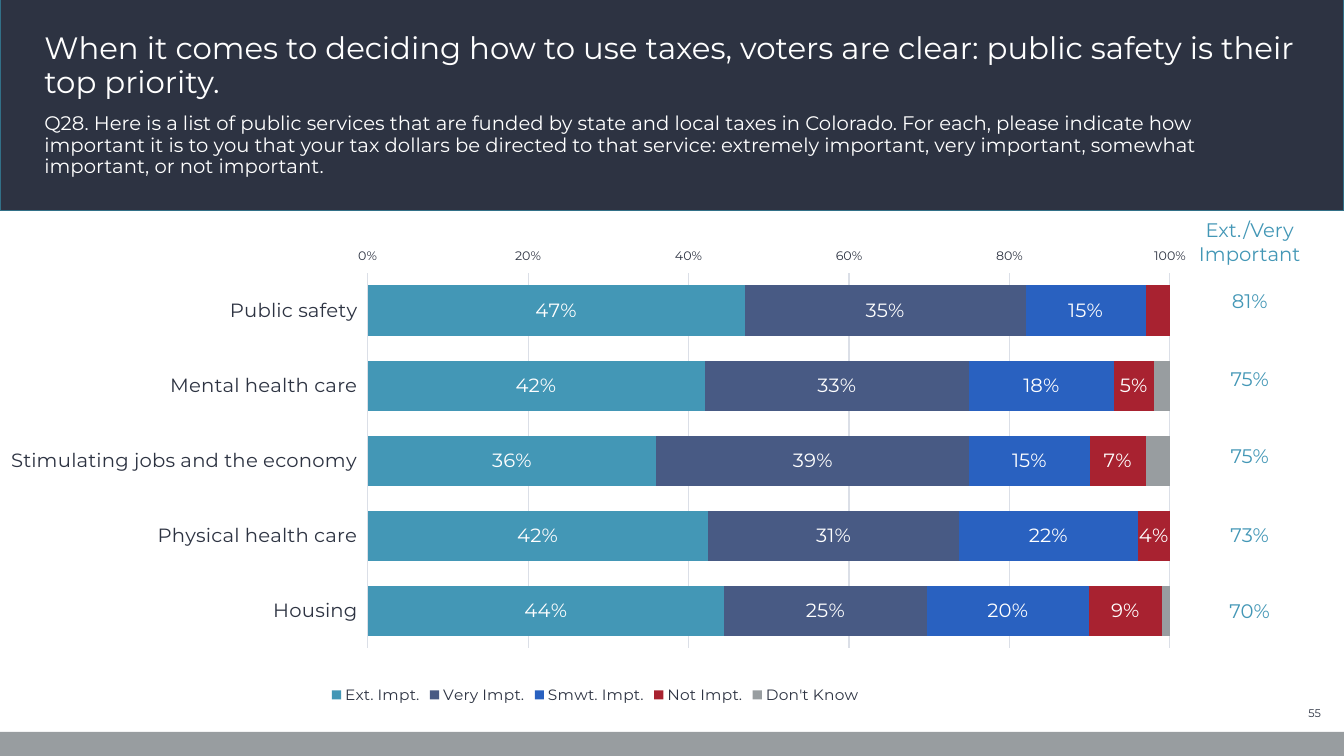
"""Build the slide on which public services voters rank highest for tax money."""
from dataclasses import dataclass
from typing import Any

import pptx
import pptx.chart.data
import pptx.dml.color
import pptx.enum.chart
import pptx.enum.shapes
import pptx.enum.text
import pptx.oxml
import pptx.oxml.ns
import pptx.util

Inches = pptx.util.Inches
Pt = pptx.util.Pt
Align = pptx.enum.text.PP_ALIGN
Anchor = pptx.enum.text.MSO_ANCHOR
qn = pptx.oxml.ns.qn

FACE = "Montserrat"
NAVY, WHITE, TEAL, GRAY = "2D3342", "FFFFFF", "4397B6", "989DA0"


@dataclass
class Box:
    left: float
    top: float
    width: float
    height: float

    def lengths(self) -> list[int]:
        return [Inches(n) for n in (self.left, self.top, self.width, self.height)]


@dataclass
class Band:
    box: Box
    fill: str
    line: str | None = None


@dataclass
class Block:
    text: str
    box: Box
    size: float
    color: str
    anchor: Any
    align: Any = Align.LEFT
    space: float = 1.0


@dataclass
class Series:
    name: str
    values: tuple[float, ...]
    color: str
    labels: bool = True


BANDS = [
    Band(Box(0, -0.03, 13.33, 2.12), NAVY, "327087"),
    Band(Box(0, 7.26, 13.33, 0.24), GRAY),
]
TITLE = Block(
    "When it comes to deciding how to use taxes, voters are clear: "
    "public safety is their top priority.",
    Box(0.34, 0.07, 12.64, 0.97), 22, WHITE, Anchor.BOTTOM, space=0.9)
QUERY = Block(
    "Q28. Here is a list of public services that are funded by state and local "
    "taxes in Colorado. For each, please indicate how important it is to you that "
    "your tax dollars be directed to that service: extremely important, very "
    "important, somewhat important, or not important.",
    Box(0.34, 1.08, 12.64, 0.92), 14, WHITE, Anchor.TOP, space=0.9)
PAGE = Block("55", Box(12.42, 6.95, 0.78, 0.24), 8, NAVY, Anchor.MIDDLE, Align.RIGHT)

TOPICS = ["Public safety", "Mental health care", "Stimulating jobs and the economy",
          "Physical health care", "Housing"]
SERIES = [
    Series("Ext. Impt.", (0.47, 0.42, 0.36, 0.42, 0.44), TEAL),
    Series("Very Impt.", (0.35, 0.33, 0.39, 0.31, 0.25), "485A84"),
    Series("Smwt. Impt.", (0.15, 0.18, 0.15, 0.22, 0.2), "2961C0"),
    Series("Not Impt.", (0.03, 0.05, 0.07, 0.04, 0.09), "A82230"),
    Series("Don't Know", (0, 0.02, 0.03, 0, 0.01), GRAY, False),
]
PLOT = {"x": 0.311, "y": 0.032, "w": 0.666, "h": 0.834}
TOTALS = [("Ext./Very Important", 0.41), ("81%", 0.47), ("75%", 0.77),
          ("75%", 0.76), ("73%", 0.79), ("70%", 0.75)]
NO_STYLE = "{2D5ABB26-0587-4C30-8999-92F81FD0307C}"


def rgb(code: str) -> pptx.dml.color.RGBColor:
    return pptx.dml.color.RGBColor.from_string(code)


def paint(target: Any, code: str) -> None:
    target.fill.solid()
    target.fill.fore_color.rgb = rgb(code)


def set_font(font: Any, size: float, code: str) -> None:
    font.name, font.size, font.bold = FACE, Pt(size), False
    font.color.rgb = rgb(code)


def add_band(slide: Any, band: Band, depth: int) -> None:
    shape = slide.shapes.add_shape(
        pptx.enum.shapes.MSO_SHAPE.RECTANGLE, *band.box.lengths())
    shape.shadow.inherit = False
    paint(shape, band.fill)
    if band.line:
        shape.line.color.rgb = rgb(band.line)
        shape.line.width = Pt(1)
    else:
        shape.line.fill.background()
    slide.shapes.element.insert(2 + depth, shape.element)


def write(shape: Any, block: Block) -> None:
    shape.left, shape.top, shape.width, shape.height = block.box.lengths()
    frame = shape.text_frame
    frame.text = block.text
    frame.word_wrap = True
    frame.auto_size = pptx.enum.text.MSO_AUTO_SIZE.NONE
    frame.vertical_anchor = block.anchor
    para = frame.paragraphs[0]
    props = para._p.get_or_add_pPr()
    props.set("marL", "0")
    props.set("indent", "0")
    props.append(props.makeelement(qn("a:buNone"), {}))
    para.alignment = block.align
    para.line_spacing = block.space
    para.space_before = Pt(0)
    set_font(para.font, block.size, block.color)


def style_axes(chart: Any) -> None:
    kinds = pptx.enum.chart
    topics, scale = chart.category_axis, chart.value_axis
    for axis, size in ((topics, 14), (scale, 9)):
        axis.format.line.fill.background()
        axis.major_tick_mark = kinds.XL_TICK_MARK.OUTSIDE
        set_font(axis.tick_labels.font, size, NAVY)
    topics.reverse_order = True
    topics.crosses = kinds.XL_AXIS_CROSSES.MAXIMUM
    topics.has_major_gridlines = False
    scale.minimum_scale, scale.maximum_scale, scale.major_unit = 0, 1, 0.2
    scale.tick_labels.number_format = "0%"
    scale.tick_labels.number_format_is_linked = False
    scale.has_major_gridlines = True
    grid = scale.major_gridlines.format.line
    grid.color.rgb = rgb("DBDFE7")
    grid.width = Pt(0.75)


def style_bars(chart: Any) -> None:
    plot = chart.plots[0]
    plot.gap_width, plot.overlap, plot.vary_by_categories = 50, 100, False
    for bar, item in zip(plot.series, SERIES):
        paint(bar.format, item.color)
        bar.invert_if_negative = False
        if item.labels:
            labels = bar.data_labels
            labels.show_value = True
            labels.number_format, labels.number_format_is_linked = "0%", False
            set_font(labels.font, 14, WHITE)
            if item.name == "Not Impt.":
                labels._element.insert(0, pptx.oxml.parse_xml(
                    f'<c:dLbl {pptx.oxml.ns.nsdecls("c")}>'
                    '<c:idx val="0"/><c:delete val="1"/></c:dLbl>'))


def place_plot(chart: Any) -> None:
    area = chart._chartSpace.find(".//" + qn("c:plotArea"))
    for old in area.findall(qn("c:layout")):
        area.remove(old)
    modes = '<c:layoutTarget val="inner"/><c:xMode val="edge"/><c:yMode val="edge"/>'
    sizes = "".join(f'<c:{key} val="{part}"/>' for key, part in PLOT.items())
    area.insert(0, pptx.oxml.parse_xml(
        f'<c:layout {pptx.oxml.ns.nsdecls("c")}><c:manualLayout>'
        f'{modes}{sizes}</c:manualLayout></c:layout>'))


def add_bars(slide: Any, box: Box) -> None:
    kinds = pptx.enum.chart
    data = pptx.chart.data.CategoryChartData(number_format="0%")
    data.categories = TOPICS
    for item in SERIES:
        data.add_series(item.name, item.values)
    chart = slide.shapes.add_chart(
        kinds.XL_CHART_TYPE.BAR_STACKED_100, *box.lengths(), data).chart
    chart.has_title = False
    set_font(chart.font, 14, NAVY)
    chart.has_legend = True
    chart.legend.position = kinds.XL_LEGEND_POSITION.BOTTOM
    chart.legend.include_in_layout = False
    set_font(chart.legend.font, 11, NAVY)
    style_axes(chart)
    style_bars(chart)
    place_plot(chart)


def add_totals(slide: Any, box: Box) -> None:
    frame = slide.shapes.add_table(len(TOTALS), 1, *box.lengths())
    frame.element.find(".//" + qn("a:tableStyleId")).text = NO_STYLE
    table = frame.table
    table.first_row = table.horz_banding = False
    for row, (text, height) in enumerate(TOTALS):
        table.rows[row].height = Inches(height)
        cell = table.cell(row, 0)
        cell.fill.background()
        cell.text = text
        cell.vertical_anchor = Anchor.BOTTOM
        edge = Inches(0.01 if row else 0)
        cell.margin_left = cell.margin_right = cell.margin_top = edge
        cell.margin_bottom = 0
        para = cell.text_frame.paragraphs[0]
        para.alignment = Align.CENTER
        if row == 0:
            para.line_spacing = Pt(17)
        set_font(para.font, 14, TEAL)


def main() -> None:
    deck = pptx.Presentation()
    deck.slide_width, deck.slide_height = Inches(13.33), Inches(7.5)
    slide = deck.slides.add_slide(deck.slide_layouts[1])
    for depth, band in enumerate(BANDS):
        add_band(slide, band, depth)
    write(slide.shapes.title, TITLE)
    write(slide.placeholders[1], QUERY)
    write(slide.shapes.add_textbox(*PAGE.box.lengths()), PAGE)
    add_bars(slide, Box(-0.07, 2.46, 11.95, 4.57))
    add_totals(slide, Box(11.45, 2.17, 1.89, 3.95))
    deck.save("out.pptx")


if __name__ == "__main__":
    main()
